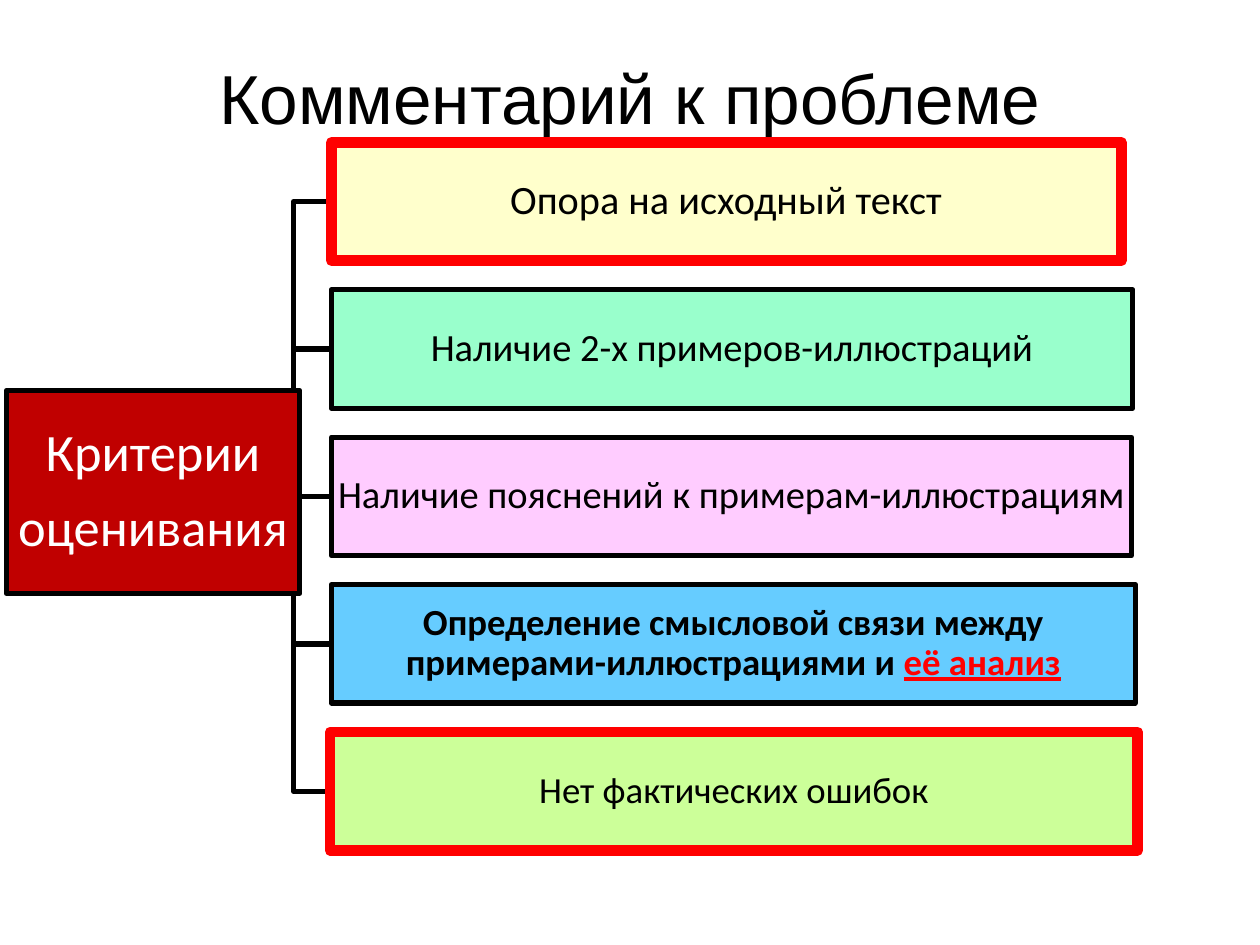
from dataclasses import dataclass

from pptx import Presentation
from pptx.dml.color import RGBColor
from pptx.enum.shapes import MSO_SHAPE
from pptx.enum.text import MSO_ANCHOR, PP_ALIGN
from pptx.util import Inches, Pt


@dataclass(frozen=True)
class Theme:
    title_font: str = "Arial"
    body_font: str = "Calibri"
    black: str = "000000"
    white: str = "FFFFFF"
    red: str = "FF0000"
    root_fill: str = "C00000"
    yellow: str = "FFFFCC"
    mint: str = "99FFCC"
    pink: str = "FFCCFF"
    blue: str = "66CCFF"
    lime: str = "CCFF99"
    title_size: float = 39.6
    root_size: float = 30
    large: float = 23
    medium: float = 22
    small: float = 21
    thin: float = 3
    thick: float = 6


T = Theme()
ROW_TOP, ROW_PITCH, ROW_HEIGHT = 1.13, 1.17, 0.94
ROOT_BOX = (0.05, 3.1, 2.33, 1.61)
TRUNK_START, TRUNK_X = 2.02, 2.33

CRITERIA = [
    (2.63, 6.27, T.yellow, T.red, T.thick, T.large,
     [("Опора на исходный текст", {})]),
    (2.63, 6.36, T.mint, T.black, T.thin, T.medium,
     [("Наличие 2-х примеров-иллюстраций", {})]),
    (2.63, 6.35, T.pink, T.black, T.thin, T.medium,
     [("Наличие пояснений к примерам-иллюстрациям", {})]),
    (2.63, 6.38, T.blue, T.black, T.thin, T.small,
     [("Определение смысловой связи между примерами-иллюстрациями и ", {"bold": True}),
      ("её анализ", {"bold": True, "underline": True, "color": T.red})]),
    (2.62, 6.41, T.lime, T.red, T.thick, T.small,
     [("Нет фактических ошибок", {})]),
]


def set_attrs(obj, values):
    for name, value in values.items():
        setattr(obj, name, value)


def add_run(p, text, name, size, color, **extra):
    r = p.add_run()
    r.text = text
    set_attrs(r.font, {"name": name, "size": Pt(size), **extra})
    r.font.color.rgb = RGBColor.from_string(color)


def set_line(sp, color, width):
    sp.shadow.inherit = False
    sp.line.color.rgb = RGBColor.from_string(color)
    sp.line.width = Pt(width)


def add_title(s, box, text):
    sp = s.shapes.title
    set_attrs(sp, dict(zip(("left", "top", "width", "height"), map(Inches, box))))
    tf = sp.text_frame
    tf.vertical_anchor = MSO_ANCHOR.MIDDLE
    p = tf.paragraphs[0]
    p.alignment = PP_ALIGN.CENTER
    add_run(p, text, T.title_font, T.title_size, T.black)


def add_box(s, box, fill, line, width, size, color, paragraphs):
    sp = s.shapes.add_shape(MSO_SHAPE.RECTANGLE, *map(Inches, box))
    sp.fill.solid()
    sp.fill.fore_color.rgb = RGBColor.from_string(fill)
    set_line(sp, line, width)
    tf = sp.text_frame
    set_attrs(tf, {"word_wrap": True, "vertical_anchor": MSO_ANCHOR.MIDDLE})
    set_attrs(tf, {f"margin_{side}": Inches(0.02)
                   for side in ("left", "top", "right", "bottom")})
    for i, runs in enumerate(paragraphs):
        p = tf.add_paragraph() if i else tf.paragraphs[0]
        set_attrs(p, {"alignment": PP_ALIGN.CENTER, "line_spacing": 0.9})
        if i < len(paragraphs) - 1:
            p.space_after = Pt(0.35 * size)
        for text, extra in runs:
            add_run(p, text, **{"name": T.body_font, "size": size, "color": color, **extra})


def add_branch(s, start, end):
    (x1, y1), (x2, y2) = start, end
    points = [(TRUNK_X, y1), (TRUNK_X, y2), (x2, y2)]
    fb = s.shapes.build_freeform(Inches(x1), Inches(y1))
    fb.add_line_segments([(Inches(x), Inches(y)) for x, y in points], close=False)
    sp = fb.convert_to_shape()
    sp.fill.background()
    set_line(sp, T.black, T.thin)


def add_tree(s, root_box, criteria):
    root_mid = root_box[1] + root_box[3] / 2
    tops = [ROW_TOP + i * ROW_PITCH for i in range(len(criteria))]
    for top, (left, *_) in zip(tops, criteria):
        add_branch(s, (TRUNK_START, root_mid), (left, top + ROW_HEIGHT / 2))
    add_box(s, root_box, T.root_fill, T.black, T.thin, T.root_size, T.white,
            [[("Критерии", {})], [("оценивания", {})]])
    for top, (left, width, fill, line, weight, size, runs) in zip(tops, criteria):
        add_box(s, (left, top, width, ROW_HEIGHT), fill, line, weight, size, T.black, [runs])


def main():
    prs = Presentation()
    set_attrs(prs, {"slide_width": Inches(10), "slide_height": Inches(7.5)})
    s = prs.slides.add_slide(prs.slide_layouts[5])
    add_title(s, (0, 0.4, 10, 0.73), "Комментарий к проблеме")
    add_tree(s, ROOT_BOX, CRITERIA)
    prs.save("out.pptx")


if __name__ == "__main__":
    main()
